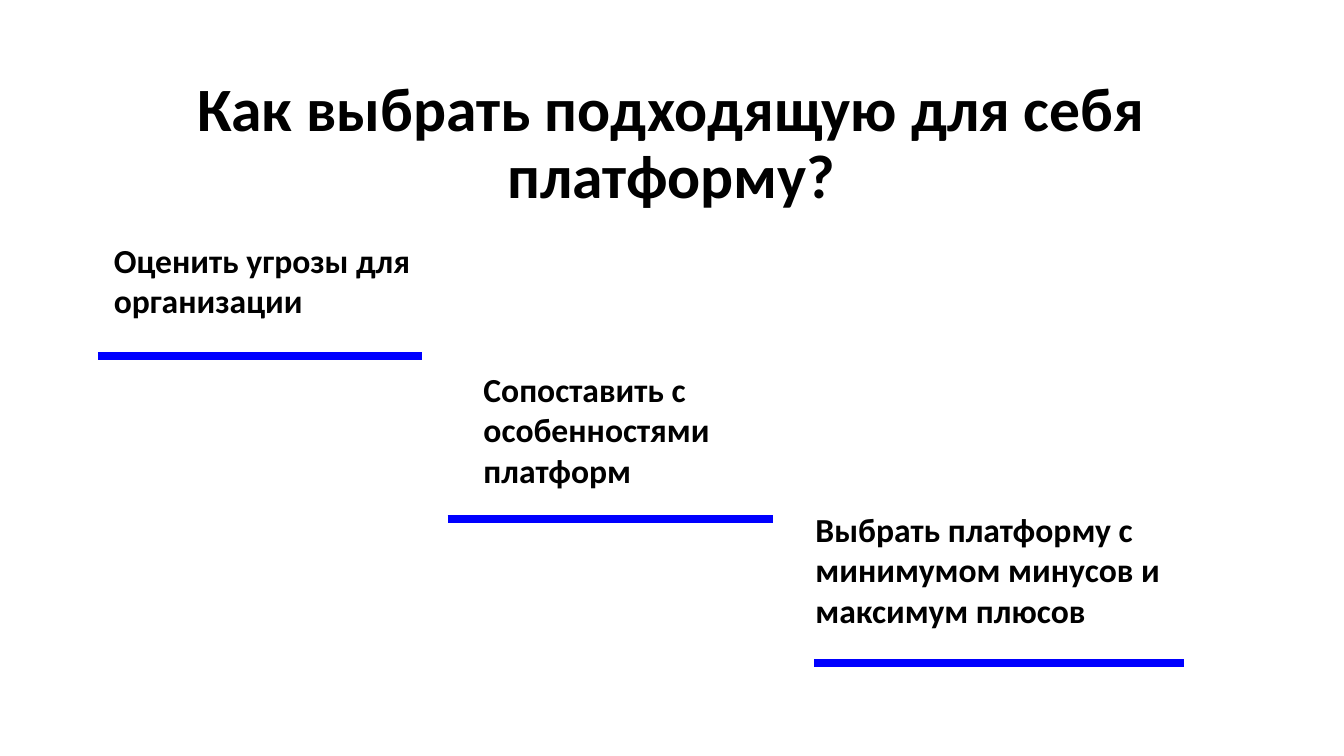
from lxml.etree import SubElement
from pptx import Presentation
from pptx.dml.color import RGBColor
from pptx.enum.shapes import MSO_CONNECTOR
from pptx.enum.text import MSO_ANCHOR, MSO_AUTO_SIZE, PP_ALIGN
from pptx.oxml.ns import qn
from pptx.util import Inches, Pt

SLIDE_WIDTH, SLIDE_HEIGHT = Inches(13.33), Inches(7.5)
COLUMNS, ROWS = 40, 30
INSET = Inches(0.13)
BLACK, BLUE = "000000", "0000FF"

TITLE = "Как выбрать подходящую для себя платформу?"
STEPS = [
    ("Оценить угрозы для организации", (3, 9, 10.32, 4.84), (2.91, 12.57, 14.12)),
    ("Сопоставить с особенностями платформ", (14, 14.12, 8.82, 3.72), (13.32, 23.01, 20.6)),
    ("Выбрать платформу с минимумом минусов и максимум плюсов",
     (23.88, 19.68, 13.62, 3.72), (24.24, 35.25, 26.32)),
]


def across(columns):
    return round(SLIDE_WIDTH * columns / COLUMNS)


def down(rows):
    return round(SLIDE_HEIGHT * rows / ROWS)


def paint(color_format, hex_color):
    color_format.rgb = RGBColor.from_string(hex_color)


def apply(target, values):
    for attribute, value in values.items():
        setattr(target, attribute, value)


def cell_area(column, row, width, height):
    return across(column), down(row), across(width), down(height)


def write(frame, wording, size, **paragraph_format):
    apply(frame, {
        "text": wording,
        "word_wrap": True,
        "auto_size": MSO_AUTO_SIZE.NONE,
        "vertical_anchor": MSO_ANCHOR.TOP,
        "margin_left": INSET,
        "margin_right": INSET,
        "margin_top": INSET,
        "margin_bottom": INSET,
    })
    paragraph = frame.paragraphs[0]
    apply(paragraph, paragraph_format)
    font = paragraph.runs[0].font
    apply(font, {"name": "Calibri", "size": Pt(size), "bold": True})
    paint(font.color, BLACK)


def add_heading(slide):
    heading = slide.shapes.title
    left, top, width, height = cell_area(1.35, 2.6, 37.26, 3.36)
    apply(heading, {"left": left, "top": top, "width": width, "height": height})
    write(heading.text_frame, TITLE, 44, alignment=PP_ALIGN.CENTER, line_spacing=0.9)


def add_step(slide, wording, area):
    step = slide.shapes.add_textbox(*cell_area(*area))
    write(step.text_frame, wording, 24, alignment=PP_ALIGN.LEFT)


def add_underline(slide, start, end, row):
    underline = slide.shapes.add_connector(
        MSO_CONNECTOR.STRAIGHT, across(start), down(row), across(end), down(row))
    underline.line.width = Pt(6)
    paint(underline.line.color, BLUE)
    SubElement(underline._element.spPr, qn("a:effectLst"))


def main():
    deck = Presentation()
    apply(deck, {"slide_width": SLIDE_WIDTH, "slide_height": SLIDE_HEIGHT})
    slide = deck.slides.add_slide(deck.slide_layouts[5])
    add_heading(slide)
    for wording, area, _ in STEPS:
        add_step(slide, wording, area)
    for _, _, stretch in STEPS:
        add_underline(slide, *stretch)
    deck.save("out.pptx")


if __name__ == "__main__":
    main()
